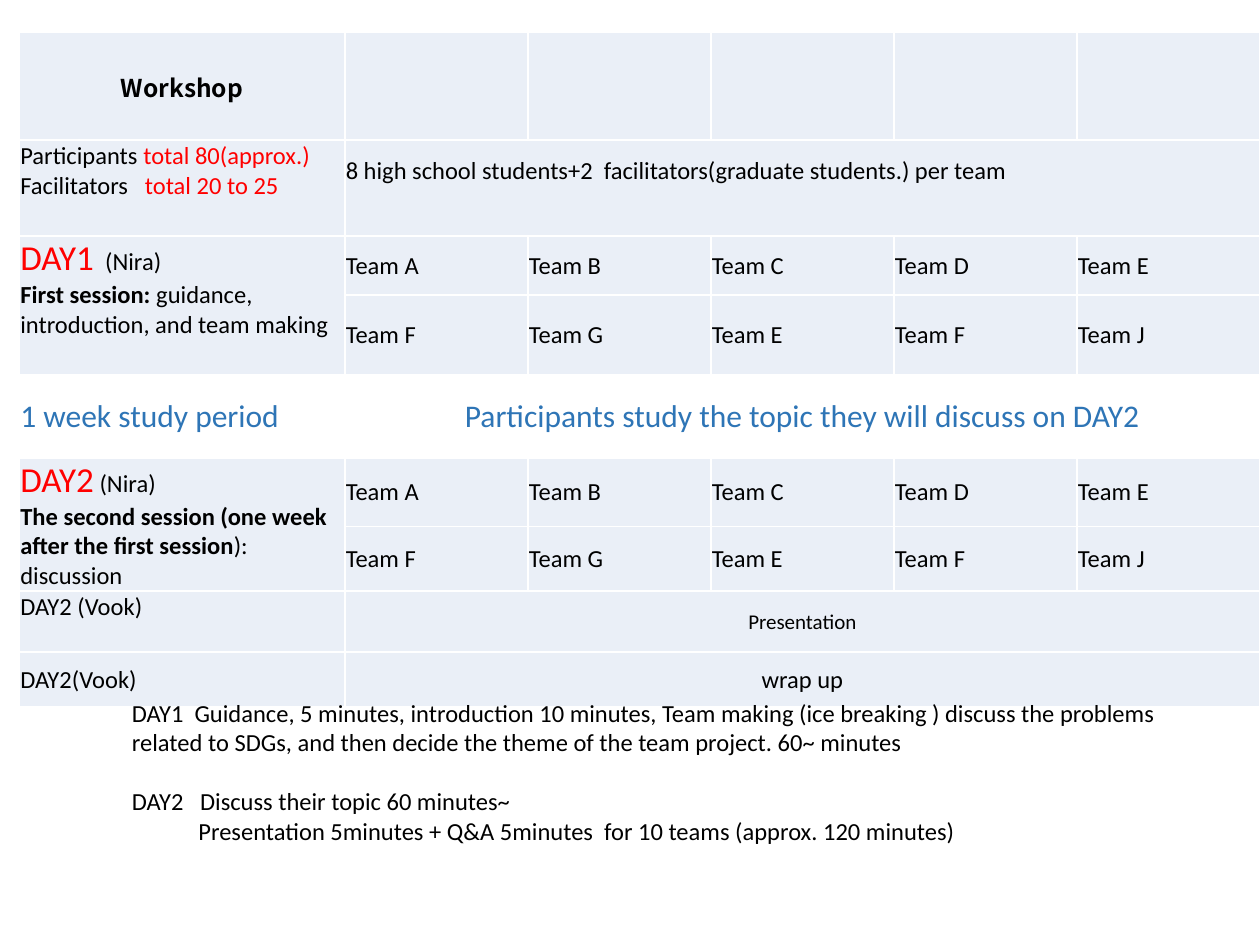
"""Build a one-slide timetable for a two-day workshop."""
import pptx
import pptx.dml.color
import pptx.enum.text
import pptx.oxml
import pptx.oxml.ns
import pptx.util

Cm = pptx.util.Cm
Pt = pptx.util.Pt
RGBColor = pptx.dml.color.RGBColor
ALIGN = pptx.enum.text.PP_ALIGN
ANCHOR = pptx.enum.text.MSO_ANCHOR

BLACK = RGBColor(0x00, 0x00, 0x00)
RED = RGBColor(0xFF, 0x00, 0x00)
BLUE = RGBColor(0x2E, 0x75, 0xB6)
PALE = RGBColor(0xEA, 0xEF, 0xF7)
WHITE = RGBColor(0xFF, 0xFF, 0xFF)

TITLE = {"bold": True, "font": "Noto Sans CJK JP"}
BOLD = {"bold": True}
ACCENT = {"color": RED}
DAY = {"color": RED, "size": 20}
STUDY = {"color": BLUE, "size": 18}

TEAM_ROWS = [
    ["Team A", "Team B", "Team C", "Team D", "Team E"],
    ["Team F", "Team G", "Team E", "Team F", "Team J"],
]
LABELS = {
    0: [[("Workshop", TITLE)]],
    1: [[("Participants ", {}), ("total 80(approx.)", ACCENT)],
        [("Facilitators", {}), ("   total 20 to 25", ACCENT)]],
    2: [[("DAY1", DAY), ("  (Nira)", {})],
        [("First session: ", BOLD), ("guidance, introduction, and team making", {})]],
    4: [[("1 week study period", STUDY)]],
    5: [[("DAY2", DAY), (" (Nira)", {})],
        [("The second session (one week after the first session", BOLD), ("):", {})],
        [("discussion", {})]],
    7: [[("DAY2 (Vook)", {})]],
    8: [[("DAY2(Vook)", {})]],
}
WIDE = {
    1: ("8 high school students+2  facilitators(graduate students.) per team", {}, ALIGN.LEFT),
    4: ("Participants study the topic they will discuss on DAY2", STUDY, ALIGN.CENTER),
    7: ("Presentation", {"size": 12}, ALIGN.CENTER),
    8: ("wrap up", {}, ALIGN.CENTER),
}
SESSION_ROWS = (2, 5)
TOP_LABELS = (1, 2, 5, 7)
STUDY_ROW = 4
COL_WIDTHS = [6.56] + [3.69] * 5
ROW_HEIGHTS = [2.16, 1.94, 1.19, 1.6, 1.68, 1.38, 1.3, 1.23, 1.09]

NOTES = [
    ("DAY1  Guidance, 5 minutes, introduction 10 minutes, Team making (ice breaking ) "
     "discuss the problems related to SDGs, and then decide the theme of the team "
     "project. 60~ minutes", 0, 0),
    ("DAY2   Discuss their topic 60 minutes~", 17, 0),
    ("Presentation 5minutes + Q&A 5minutes  for 10 teams (approx. 120 minutes)", 0, 1.34),
]


def style_run(r, size=14, color=BLACK, bold=False, font="Calibri"):
    r.font.size = Pt(size)
    r.font.color.rgb = color
    r.font.bold = bold
    r.font.name = font


def write(tf, paragraphs, align=ALIGN.LEFT):
    for i, parts in enumerate(paragraphs):
        p = tf.add_paragraph() if i else tf.paragraphs[0]
        p.alignment = align
        for text, style in parts:
            r = p.add_run()
            r.text = text
            style_run(r, **style)


def format_cell(cell, color):
    cell.margin_left = cell.margin_right = cell.margin_top = Cm(0.02)
    cell.margin_bottom = 0
    cell.vertical_anchor = ANCHOR.MIDDLE
    cell.fill.solid()
    cell.fill.fore_color.rgb = color
    tcPr = cell._tc.get_or_add_tcPr()
    for i, side in enumerate("LRTB"):
        tcPr.insert(i, pptx.oxml.parse_xml(
            f'<a:ln{side} {pptx.oxml.ns.nsdecls("a")} w="12700"><a:solidFill>'
            f'<a:srgbClr val="{WHITE}"/></a:solidFill></a:ln{side}>'))


def add_timetable(s):
    table = s.shapes.add_table(
        len(ROW_HEIGHTS), len(COL_WIDTHS), Cm(0.39), Cm(0.66),
        Cm(sum(COL_WIDTHS)), Cm(sum(ROW_HEIGHTS))).table
    table.first_row = table.horz_banding = False
    for col, width in zip(table.columns, COL_WIDTHS):
        col.width = Cm(width)
    for i, height in enumerate(ROW_HEIGHTS):
        table.rows[i].height = Cm(height)
        for cell in table.rows[i].cells:
            format_cell(cell, WHITE if i == STUDY_ROW else PALE)
            cell.text_frame.paragraphs[0].font.size = Pt(14)

    for i, paragraphs in LABELS.items():
        cell = table.cell(i, 0)
        write(cell.text_frame, paragraphs, ALIGN.LEFT if i else ALIGN.CENTER)
        if i in TOP_LABELS:
            cell.vertical_anchor = ANCHOR.TOP
    for i, (text, style, align) in WIDE.items():
        cell = table.cell(i, 1)
        cell.merge(table.cell(i, len(COL_WIDTHS) - 1))
        write(cell.text_frame, [[(text, style)]], align)
    table.cell(1, 1).margin_bottom = Cm(0.69)
    for top in SESSION_ROWS:
        table.cell(top, 0).merge(table.cell(top + 1, 0))
        for i, teams in enumerate(TEAM_ROWS, top):
            for j, team in enumerate(teams, 1):
                write(table.cell(i, j).text_frame, [[(team, {})]])


def add_notes_box(s):
    tf = s.shapes.add_textbox(Cm(2.41), Cm(13.94), Cm(22.33), Cm(3.84)).text_frame
    tf.word_wrap = True
    write(tf, [[(text, {})] for text, _, _ in NOTES])
    for p, (_, space, indent) in zip(tf.paragraphs, NOTES):
        p.space_before = Pt(space)
        if indent:
            p._p.get_or_add_pPr().set("marL", str(Cm(indent)))


def main():
    prs = pptx.Presentation()
    prs.slide_width, prs.slide_height = Cm(25.4), Cm(19.05)
    s = prs.slides.add_slide(prs.slide_layouts[6])
    add_timetable(s)
    add_notes_box(s)
    prs.save("out.pptx")


if __name__ == "__main__":
    main()
